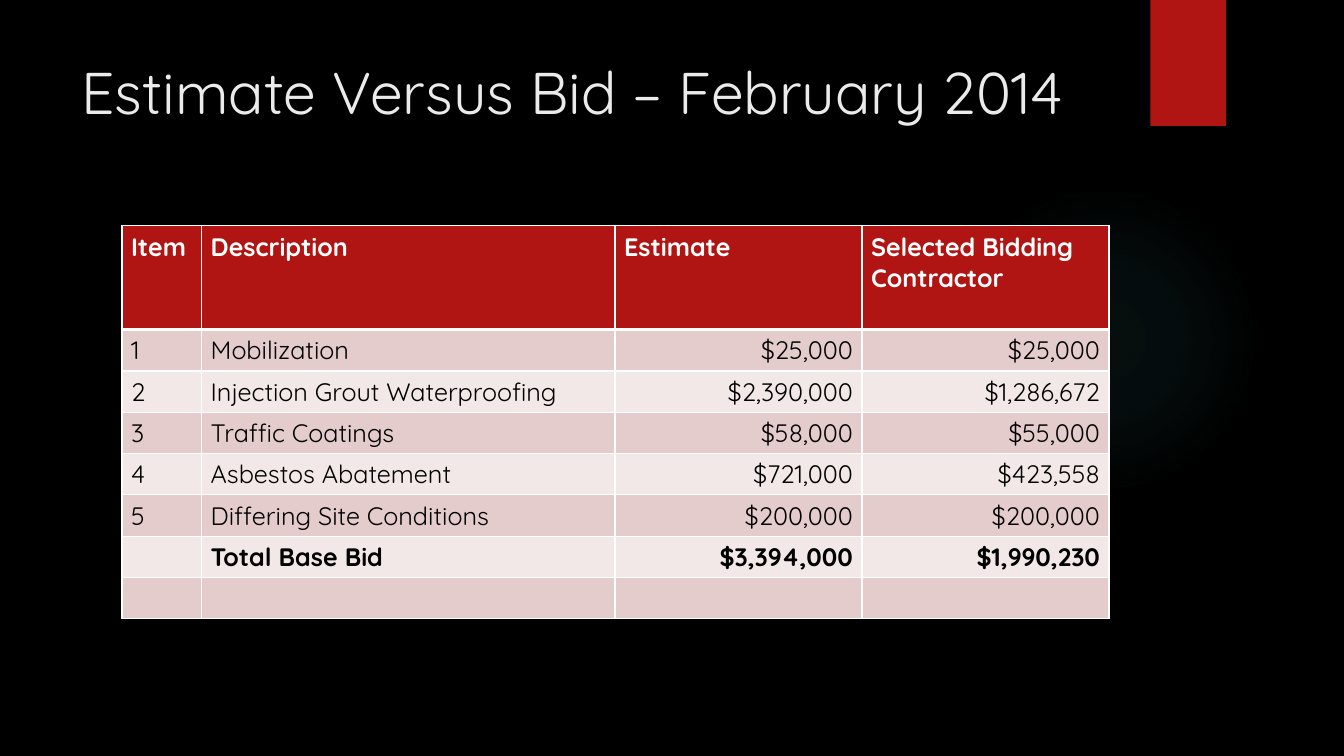
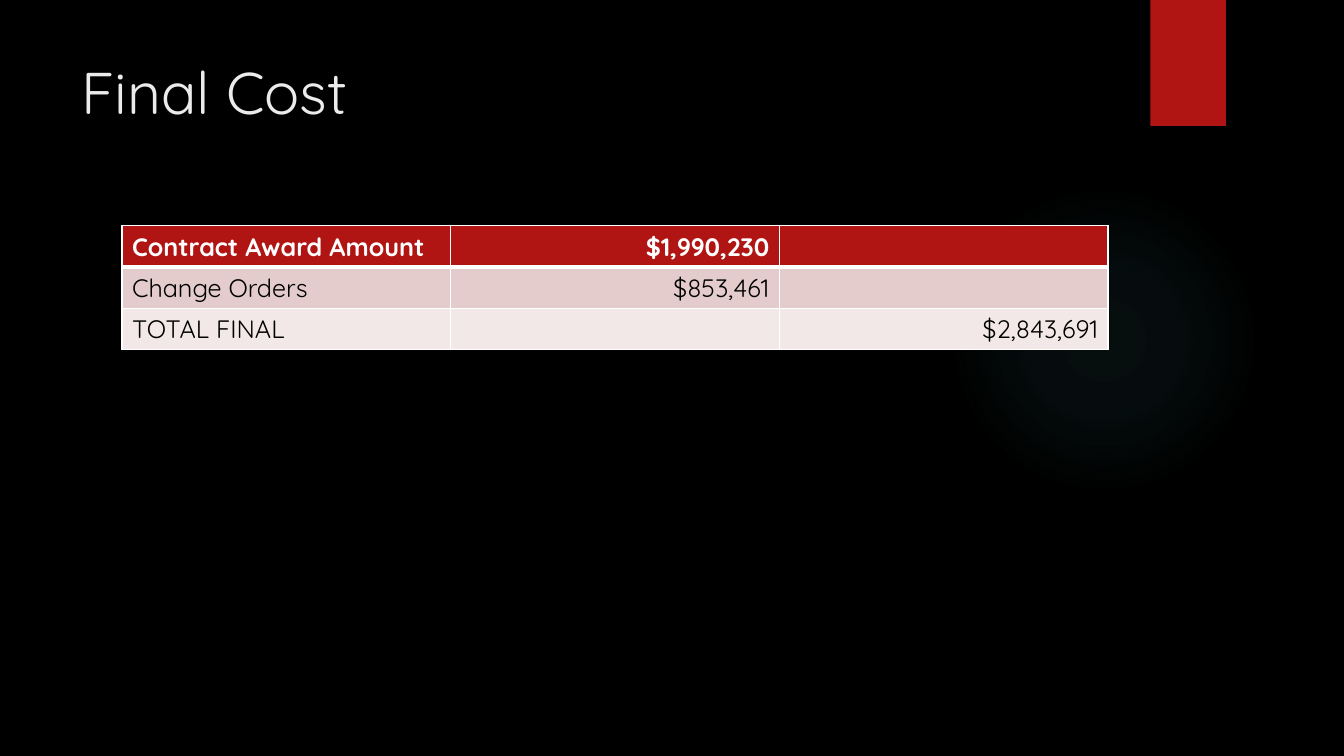
from dataclasses import dataclass

from lxml import etree
from pptx import Presentation
from pptx.dml.color import RGBColor
from pptx.enum.shapes import MSO_SHAPE
from pptx.enum.text import MSO_ANCHOR, PP_ALIGN
from pptx.oxml import parse_xml
from pptx.util import Inches, Pt

RECT, OVAL = MSO_SHAPE.RECTANGLE, MSO_SHAPE.OVAL
TOP = MSO_ANCHOR.TOP
LEFT, RIGHT = PP_ALIGN.LEFT, PP_ALIGN.RIGHT
NS = "http://schemas.openxmlformats.org/drawingml/2006/main"


@dataclass(frozen=True)
class Theme:
    font: str = "Quicksand"
    title_size: int = 42
    table_size: int = 18
    back: str = "000000"
    title: str = "EBEBEB"
    accent: str = "B01513"
    glow: str = "50B9C1"
    head_text: str = "FFFFFF"
    body_text: str = "000000"
    rule: str = "FFFFFF"
    bands: tuple = ("E4CCCC", "F2E8E7")
    thin: int = 1
    thick: int = 3


THEME = Theme()
GLOW_STOPS = ((0, 7), (36, 6), (69, 0))
GLOW_BOX = (9.41, 1.83, 3.08, 3.08)
TAB_BOX = (11.41, 0, 0.75, 1.25)
TITLE_BOX = (0.71, 0.5, 10.29, 1.53)
TABLE_LEFT, TABLE_TOP, TABLE_WIDTH = 1.21, 2.24, 9.78
ROW_HEIGHT = 0.41

BID_ROWS = [
    ("Item", "Description", "Estimate", "Selected Bidding Contractor"),
    ("1", "Mobilization", "$25,000", "$25,000"),
    ("2", "Injection Grout Waterproofing", "$2,390,000", "$1,286,672"),
    ("3", "Traffic Coatings", "$58,000", "$55,000"),
    ("4", "Asbestos Abatement", "$721,000", "$423,558"),
    ("5", "Differing Site Conditions", "$200,000", "$200,000"),
    ("", "Total Base Bid", "$3,394,000", "$1,990,230"),
    ("", "", "", ""),
]
COST_ROWS = [
    ("Contract Award Amount", "$1,990,230", ""),
    ("Change Orders", "$853,461", ""),
    ("TOTAL FINAL", "", "$2,843,691"),
]


def rgb(value):
    return RGBColor.from_string(value)


def inches(box):
    return [Inches(v) for v in box]


def style(p, size, color, bold=False):
    p.font.name = THEME.font
    p.font.size = Pt(size)
    p.font.bold = bold
    p.font.color.rgb = rgb(color)


def add_plain_shape(s, kind, box):
    sp = s.shapes.add_shape(kind, *inches(box))
    sp.shadow.inherit = False
    sp.line.fill.background()
    return sp


def add_glow(s, box):
    sp = add_plain_shape(s, OVAL, box)
    stops = "".join(
        f'<a:gs pos="{pos * 1000}"><a:srgbClr val="{THEME.glow}">'
        f'<a:alpha val="{alpha * 1000}"/></a:srgbClr></a:gs>'
        for pos, alpha in GLOW_STOPS
    )
    grad = parse_xml(
        f'<a:gradFill xmlns:a="{NS}"><a:gsLst>{stops}</a:gsLst>'
        '<a:path path="circle">'
        '<a:fillToRect l="50000" t="50000" r="50000" b="50000"/>'
        "</a:path></a:gradFill>"
    )
    sp._element.spPr.find(f"{{{NS}}}prstGeom").addnext(grad)


def add_tab(s, box):
    sp = add_plain_shape(s, RECT, box)
    sp.fill.solid()
    sp.fill.fore_color.rgb = rgb(THEME.accent)


def add_title(s, box, text):
    tf = s.shapes.add_textbox(*inches(box)).text_frame
    tf.word_wrap = True
    tf.vertical_anchor = TOP
    p = tf.paragraphs[0]
    p.text = text
    style(p, THEME.title_size, THEME.title)


def set_borders(cell, top, bottom):
    tc_pr = cell._tc.get_or_add_tcPr()
    widths = {"lnL": THEME.thin, "lnR": THEME.thin, "lnT": top, "lnB": bottom}
    for i, (side, width) in enumerate(widths.items()):
        ln = etree.Element(f"{{{NS}}}{side}", w=str(Pt(width)))
        fill = etree.SubElement(ln, f"{{{NS}}}solidFill")
        etree.SubElement(fill, f"{{{NS}}}srgbClr", val=THEME.rule)
        tc_pr.insert(i, ln)


def fill_cell(cell, row, text, bold, margin):
    head = row == 0
    cell.fill.solid()
    fill = THEME.accent if head else THEME.bands[(row - 1) % 2]
    cell.fill.fore_color.rgb = rgb(fill)
    cell.margin_left = cell.margin_right = Inches(margin)
    set_borders(cell, THEME.thick if row == 1 else THEME.thin,
                THEME.thick if head else THEME.thin)
    p = cell.text_frame.paragraphs[0]
    p.text = text
    p.alignment = RIGHT if text.startswith("$") else LEFT
    style(p, THEME.table_size,
          THEME.head_text if head else THEME.body_text, bold)


def add_grid(s, left, top, rows, widths, head_height, margin, bold_rows):
    heights = [head_height] + [ROW_HEIGHT] * (len(rows) - 1)
    box = (left, top, sum(widths), sum(heights))
    table = s.shapes.add_table(len(rows), len(widths), *inches(box)).table
    table.first_row = table.horz_banding = False
    for column, width in zip(table.columns, widths):
        column.width = Inches(width)
    for i, (row, height) in enumerate(zip(rows, heights)):
        table.rows[i].height = Inches(height)
        for j, text in enumerate(row):
            fill_cell(table.cell(i, j), i, text, i in bold_rows, margin)


def add_table_slide(prs, title, rows, widths, head_height=ROW_HEIGHT,
                    margin=0.1, bold_rows=(0,)):
    s = prs.slides.add_slide(prs.slide_layouts[6])
    add_glow(s, GLOW_BOX)
    add_tab(s, TAB_BOX)
    add_title(s, TITLE_BOX, title)
    add_grid(s, TABLE_LEFT, TABLE_TOP, rows, widths, head_height, margin,
             bold_rows)


def main():
    prs = Presentation()
    prs.slide_width, prs.slide_height = Inches(13.33), Inches(7.5)
    back = prs.slide_master.background.fill
    back.solid()
    back.fore_color.rgb = rgb(THEME.back)
    add_table_slide(prs, "Estimate Versus Bid – February 2014", BID_ROWS,
                    (0.79, 4.1, 2.45, 2.45), head_height=1.03, margin=0.09,
                    bold_rows=(0, 6))
    add_table_slide(prs, "Final Cost", COST_ROWS, [TABLE_WIDTH / 3] * 3)
    prs.save("out.pptx")


if __name__ == "__main__":
    main()
